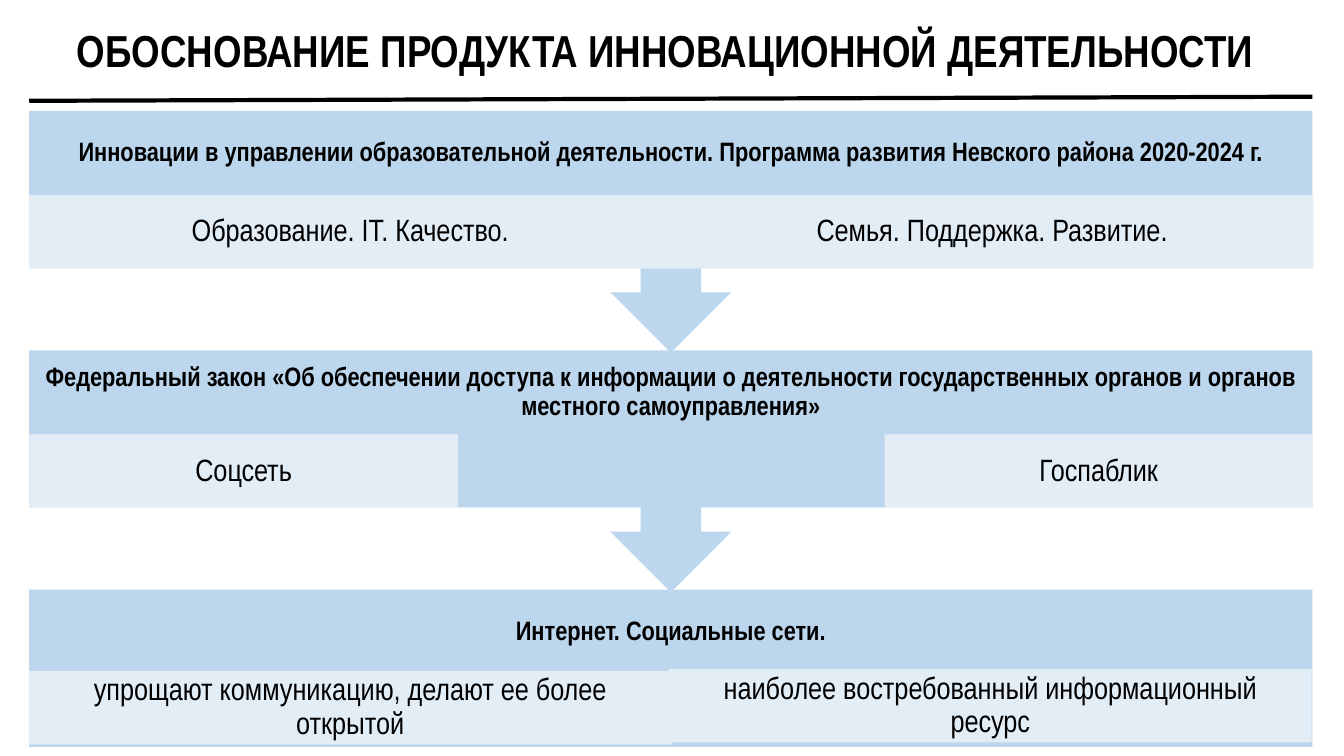
"""Build a slide that justifies the innovation product in three linked steps."""
from dataclasses import dataclass

from lxml.etree import SubElement
from pptx import Presentation
from pptx.dml.color import RGBColor as RGB
from pptx.enum.shapes import MSO_CONNECTOR as Link, MSO_SHAPE as Shape
from pptx.enum.text import MSO_ANCHOR as Anchor, MSO_AUTO_SIZE as Fit, PP_ALIGN as Align
from pptx.oxml.ns import qn
from pptx.shapes.autoshape import Shape as AutoShape
from pptx.slide import Slide
from pptx.util import Pt


@dataclass(frozen=True)
class Theme:
    """Colours and type sizes."""

    font: str = "Arial Narrow"
    ink: RGB = RGB(0, 0, 0)
    band: RGB = RGB(0xBC, 0xD7, 0xED)
    cell: RGB = RGB(0xE7, 0xF0, 0xF7)
    cell_opacity: int = 90
    title: float = 32
    heading: float = 19
    body: float = 22


@dataclass(frozen=True)
class Cell:
    """A pale box inside a step, placed relative to the step."""

    text: str
    left: float
    top: float
    width: float


@dataclass(frozen=True)
class Step:
    """A blue band with a heading and two cells."""

    heading: str
    cells: tuple[Cell, Cell]


THEME = Theme()
LEFT, TOP, WIDTH, PITCH = 20.9, 79.2, 916.6, 171
BAND_H, CALLOUT_H, HEADING_H, CELL_H = 112.3, 172.8, 60.5, 51.8
HALF, THIRD = 458.5, 305.3

STEPS = (
    Step(
        "Инновации в управлении образовательной деятельности. "
        "Программа развития Невского района 2020-2024 г.",
        (
            Cell("Образование. IT. Качество.", 0, HEADING_H, HALF),
            Cell("Семья. Поддержка. Развитие.", HALF, HEADING_H, HALF),
        ),
    ),
    Step(
        "Федеральный закон «Об обеспечении доступа к информации о деятельности "
        "государственных органов и органов местного самоуправления»",
        (
            Cell("Соцсеть", 0.5, HEADING_H, THIRD),
            Cell("Госпаблик", WIDTH - THIRD, HEADING_H, THIRD),
        ),
    ),
    Step(
        "Интернет. Социальные сети.",
        (
            Cell("упрощают коммуникацию, делают ее более открытой", 0, 58.3, HALF),
            Cell("наиболее востребованный информационный ресурс", 457.2, 57, HALF),
        ),
    ),
)


def write(sp: AutoShape, text: str, size: float, bold: bool,
          insets: tuple[float, float, float, float]) -> None:
    """Set centred text with insets given as left, top, right, bottom."""
    tf = sp.text_frame
    tf.word_wrap = True
    tf.auto_size = Fit.NONE
    tf.vertical_anchor = Anchor.MIDDLE
    tf.margin_left, tf.margin_top, tf.margin_right, tf.margin_bottom = map(Pt, insets)
    tf.text = text
    p = tf.paragraphs[0]
    p.alignment = Align.CENTER
    p.line_spacing = 0.9
    font = p.runs[0].font
    font.name, font.size, font.bold = THEME.font, Pt(size), bold
    font.color.rgb = THEME.ink


def add_box(s: Slide, kind: Shape, left: float, top: float,
            width: float, height: float, colour: RGB) -> AutoShape:
    """Add a filled shape without outline or shadow."""
    sp = s.shapes.add_shape(kind, Pt(left), Pt(top), Pt(width), Pt(height))
    sp.shadow.inherit = False
    sp.fill.solid()
    sp.fill.fore_color.rgb = colour
    sp.line.fill.background()
    return sp


def add_cell(s: Slide, cell: Cell, step_top: float) -> None:
    """Add a translucent cell with its text."""
    sp = add_box(s, Shape.RECTANGLE, LEFT + cell.left, step_top + cell.top,
                 cell.width, CELL_H, THEME.cell)
    sp.line.color.rgb = THEME.cell
    sp.line.width = Pt(0.75)
    for colour in sp._element.spPr.iter(qn("a:srgbClr")):
        SubElement(colour, qn("a:alpha"), val=str(THEME.cell_opacity * 1000))
    write(sp, cell.text, THEME.body, False, (12.3, 2, 12.3, 2))


def add_step(s: Slide, step: Step, top: float, last: bool) -> None:
    """Add a step; all but the last point down to the next one."""
    kind, height = ((Shape.RECTANGLE, BAND_H) if last
                    else (Shape.DOWN_ARROW_CALLOUT, CALLOUT_H))
    sp = add_box(s, kind, LEFT, top, WIDTH, height, THEME.band)
    if not last:
        for i, value in enumerate((0.25, 0.25, 0.25, 0.65)):
            sp.adjustments[i] = value
    pad = 10.8
    write(sp, step.heading, THEME.heading, True,
          (pad, pad, pad, BAND_H - HEADING_H + pad))
    for cell in step.cells:
        add_cell(s, cell, top)


def add_title(s: Slide, text: str) -> None:
    """Place the title and the rule below it."""
    sp = s.shapes.title
    sp.left, sp.top, sp.width, sp.height = Pt(0), Pt(6.5), Pt(951), Pt(62.6)
    write(sp, text, THEME.title, True, (7.2, 3.6, 7.2, 3.6))
    rule = s.shapes.add_connector(Link.STRAIGHT, Pt(LEFT), Pt(72),
                                  Pt(LEFT + WIDTH), Pt(69.1))
    rule.line.color.rgb = THEME.ink
    rule.line.width = Pt(3)
    SubElement(rule._element.spPr, qn("a:effectLst"))


def main() -> None:
    """Build and save the slide."""
    prs = Presentation()
    prs.slide_width, prs.slide_height = Pt(960), Pt(540)
    s = prs.slides.add_slide(prs.slide_layouts[5])
    add_title(s, "ОБОСНОВАНИЕ ПРОДУКТА ИННОВАЦИОННОЙ ДЕЯТЕЛЬНОСТИ")
    for i, step in enumerate(STEPS):
        add_step(s, step, TOP + i * PITCH, i == len(STEPS) - 1)
    prs.save("out.pptx")


if __name__ == "__main__":
    main()
